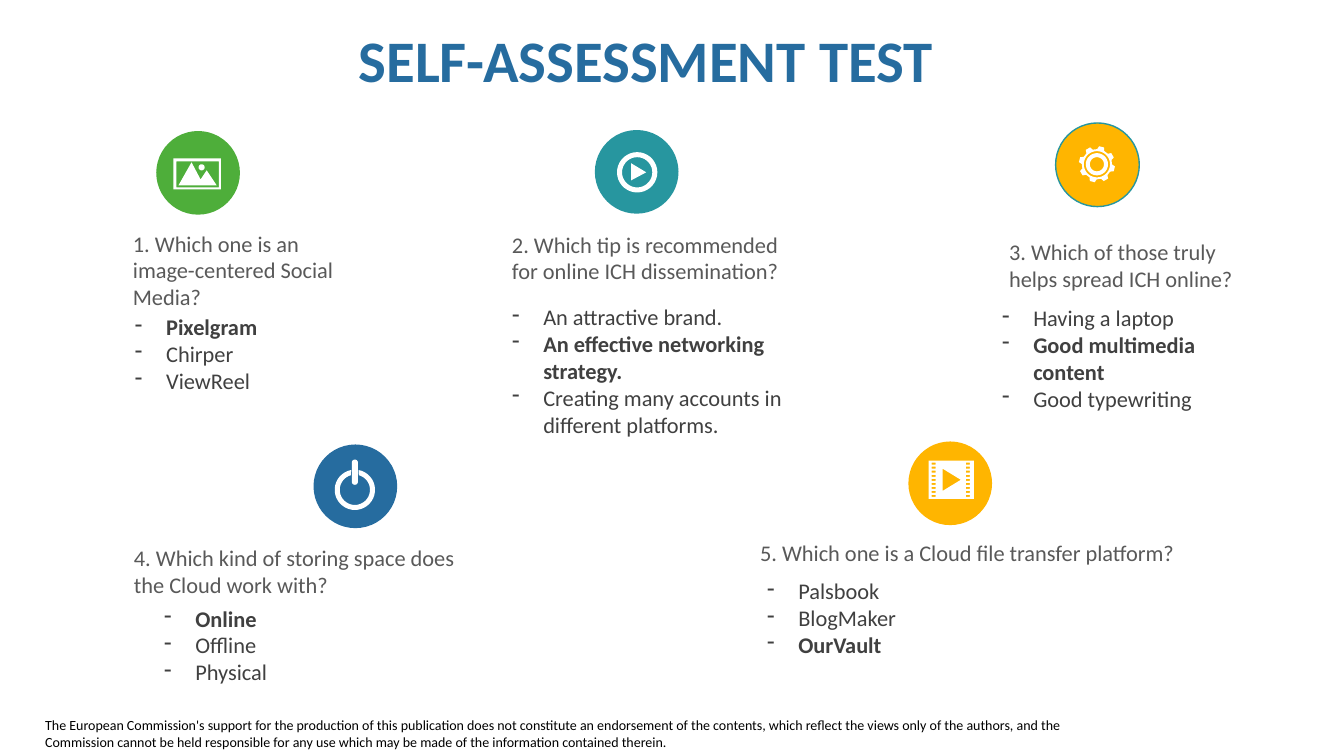
from math import cos, radians, sin

from lxml import etree
from pptx import Presentation
from pptx.dml.color import RGBColor
from pptx.enum.shapes import MSO_SHAPE
from pptx.enum.text import MSO_ANCHOR
from pptx.oxml.ns import qn
from pptx.util import Inches, Pt

ELLIPSE = MSO_SHAPE.OVAL
TOP = MSO_ANCHOR.TOP
MIDDLE = MSO_ANCHOR.MIDDLE

WHITE = RGBColor(0xFF, 0xFF, 0xFF)
BLACK = RGBColor(0x00, 0x00, 0x00)
GREEN = RGBColor(0x4E, 0xAE, 0x3A)
TEAL = RGBColor(0x27, 0x96, 0x9F)
AMBER = RGBColor(0xFF, 0xB5, 0x00)
BLUE = RGBColor(0x26, 0x6C, 0x9F)
QUESTION_GREY = RGBColor(0x59, 0x59, 0x59)
ANSWER_GREY = RGBColor(0x40, 0x40, 0x40)

DISC_SIZE = 0.83


def arc(x, y, radius, start=0, end=360):
    steps = 36
    angles = [radians(start + (end - start) * step / steps) for step in range(steps + 1)]
    return [(x + radius * cos(angle), y + radius * sin(angle)) for angle in angles]


def rectangle(left, top, width, height):
    right, bottom = left + width, top + height
    return [(left, top), (right, top), (right, bottom), (left, bottom)]


def landscape_icon():
    mountains = [(1.9, 1.61), (1.99, 1.78), (2.05, 1.69), (2.15, 1.84), (1.77, 1.84)]
    return [rectangle(1.72, 1.57, 0.47, 0.31), rectangle(1.75, 1.6, 0.42, 0.26),
            mountains, arc(2, 1.66, 0.03)]


def play_icon():
    x, y = 6.32, 1.71
    return [arc(x, y, 0.2), arc(x, y, 0.15), [(6.26, 1.62), (6.41, y), (6.26, 1.79)]]


def gear_icon():
    x, y = 10.88, 1.63
    outline = []
    for tooth in range(8):
        for radius, offset in ((0.15, -14), (0.18, -8), (0.18, 8), (0.15, 14)):
            angle = radians(15 + 45 * tooth + offset)
            outline.append((x + radius * cos(angle), y + radius * sin(angle)))
    return [outline] + [arc(x, y, radius) for radius in (0.13, 0.11, 0.07)]


def power_icon():
    x, y = 3.52, 4.86
    ring = arc(x, y, 0.2, -79, 259) + arc(x, y, 0.15, 255, -75)
    bar = arc(x, 4.59, 0.03, 180, 360) + arc(x, 4.78, 0.03, 0, 180)
    return [ring, bar]


def film_icon():
    holes = [rectangle(left, 4.59 + 0.04 * row, 0.04, 0.02)
             for row in range(9) for left in (9.24, 9.58)]
    return [rectangle(9.21, 4.57, 0.45, 0.38), [(9.35, 4.65), (9.53, 4.76), (9.35, 4.87)]] + holes


class QuizSlide:
    font_name = "Calibri"
    body_size = 16
    answer_indent = 0.31

    def __init__(self, deck):
        self.page = deck.slides.add_slide(deck.slide_layouts[6])

    def text(self, place, lines, size, color, bold=(), anchor=TOP):
        box = self.page.shapes.add_textbox(*map(Inches, place))
        frame = box.text_frame
        frame.word_wrap = True
        frame.vertical_anchor = anchor
        frame.text = "\n".join(lines)
        for para in frame.paragraphs:
            for span in para.runs:
                span.font.name = self.font_name
                span.font.size = Pt(size)
                span.font.color.rgb = color
                span.font.bold = span.text in bold
        return frame

    def title(self, place, wording):
        frame = self.text(place, [wording], 42, BLUE, [wording], MIDDLE)
        frame.paragraphs[0].line_spacing = 0.9

    def question(self, place, wording):
        self.text(place, [wording], self.body_size, QUESTION_GREY)

    def answers(self, place, choices, correct):
        frame = self.text(place, choices, self.body_size, ANSWER_GREY, [correct])
        for para in frame.paragraphs:
            properties = para._p.get_or_add_pPr()
            properties.set("marL", str(Inches(self.answer_indent)))
            properties.set("indent", str(-Inches(self.answer_indent)))
            etree.SubElement(properties, qn("a:buChar")).set("char", "-")

    def paint(self, shape, fill, line=None):
        shape.shadow.inherit = False
        shape.fill.solid()
        shape.fill.fore_color.rgb = fill
        if line is None:
            shape.line.fill.background()
        else:
            shape.line.color.rgb = line
            shape.line.width = Pt(1)

    def disc(self, left, top, fill, line=None):
        size = Inches(DISC_SIZE)
        shape = self.page.shapes.add_shape(ELLIPSE, Inches(left), Inches(top), size, size)
        self.paint(shape, fill, line)

    def icon(self, contours):
        builder = None
        for contour in contours:
            points = [(Inches(x), Inches(y)) for x, y in contour]
            if builder is None:
                builder = self.page.shapes.build_freeform(*points[0])
            else:
                builder.move_to(*points[0])
            builder.add_line_segments(points[1:], close=True)
        self.paint(builder.convert_to_shape(), WHITE)


QUIZ = [
    ((1.22, 2.23, 2.4, 0.3), "1. Which one is an image-centered Social Media?",
     (1.24, 3.06, 2.4, 0.91), ["Pixelgram", "Chirper", "ViewReel"], "Pixelgram",
     (1.55, 1.3, GREEN), landscape_icon()),
    ((4.98, 2.24, 2.96, 0.3), "2. Which tip is recommended for online ICH dissemination?",
     (4.98, 2.96, 3.52, 0.91),
     ["An attractive brand.", "An effective networking strategy.",
      "Creating many accounts in different platforms."],
     "An effective networking strategy.", (5.9, 1.29, TEAL), play_icon()),
    ((9.91, 2.31, 2.63, 0.23), "3. Which of those truly helps spread ICH online?",
     (9.84, 2.97, 2.4, 0.91),
     ["Having a laptop", "Good multimedia content", "Good typewriting"],
     "Good multimedia content", (10.47, 1.22, AMBER, TEAL), gear_icon()),
    ((1.23, 5.35, 3.61, 0.36), "4. Which kind of storing space does the Cloud work with?",
     (1.53, 5.95, 2.4, 0.91), ["Online", "Offline", "Physical"], "Online",
     (3.11, 4.41, BLUE), power_icon()),
    ((7.44, 5.3, 4.36, 0.41), "5. Which one is a Cloud file transfer platform?",
     (7.51, 5.68, 2.4, 0.91), ["Palsbook", "BlogMaker", "OurVault"], "OurVault",
     (9.01, 4.38, AMBER), film_icon()),
]

DISCLAIMER = (
    "The European Commission's support for the production of this publication does not "
    "constitute an endorsement of the contents, which reflect the views only of the authors, "
    "and the Commission cannot be held responsible for any use which may be made of the "
    "information contained therein."
)


def main():
    deck = Presentation()
    deck.slide_width = Inches(13.33)
    deck.slide_height = Inches(7.5)
    slide = QuizSlide(deck)
    slide.text((0.35, 7.06, 10.46, 0.44), [DISCLAIMER], 10, BLACK)
    slide.title((3.46, 0.23, 7.6, 0.79), "SELF-ASSESSMENT TEST")
    for question_place, question, answer_place, choices, correct, disc, contours in QUIZ:
        slide.question(question_place, question)
        slide.answers(answer_place, choices, correct)
        slide.disc(*disc)
        slide.icon(contours)
    deck.save("out.pptx")


if __name__ == "__main__":
    main()
